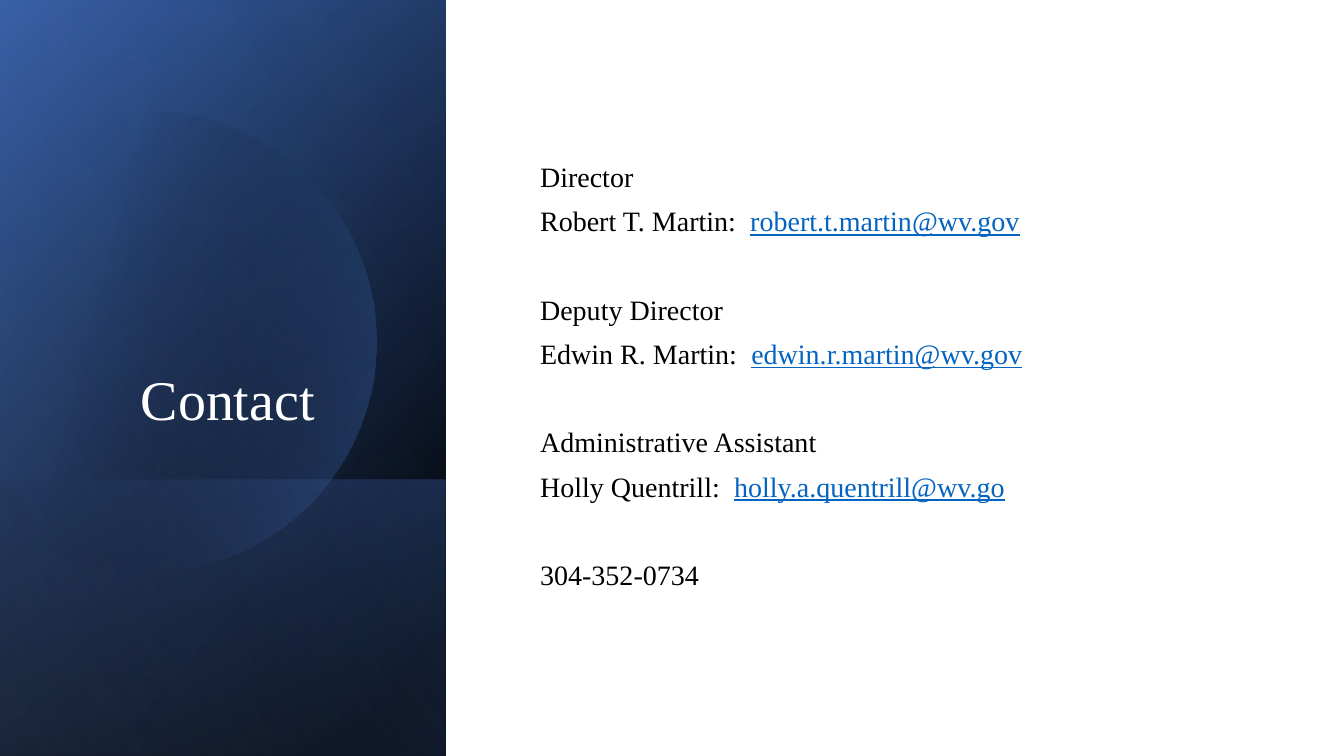
from math import acos, cos, sin

from pptx import Presentation
from pptx.dml.color import RGBColor
from pptx.enum.shapes import MSO_SHAPE
from pptx.enum.text import MSO_ANCHOR, PP_ALIGN
from pptx.oxml import parse_xml
from pptx.oxml.ns import nsdecls, qn
from pptx.util import Pt

# Content: role, then name and address
TITLE = "Contact"
CONTACTS = [
    ("Director", "Robert T. Martin:  ", "robert.t.martin@wv.gov"),
    ("Deputy Director", "Edwin R. Martin:  ", "edwin.r.martin@wv.gov"),
    ("Administrative Assistant", "Holly Quentrill:  ", "holly.a.quentrill@wv.go"),
]
PHONE = "304-352-0734"

# Layout and style, in points
FONT = "Times New Roman"
WIDTH, HEIGHT = 960, 540
PANEL_WIDTH = 318.5
BAND_TOP = 342.8
CIRCLE_X, CIRCLE_Y, RADIUS = 103.7, 244, 165
LINE_GAP, GROUP_GAP = 10, 41.6

# Gradients: angle, then stops of position, colour and opacity in percent
BASE = (220, [(0, "000000", 100), (8, "000000", 100), (100, "2F5496", 100)])
GLOW = (240, [(0, "000000", 0), (99, "4472C4", 46), (100, "4472C4", 46)])
BAND = (140, [(0, "4472C4", 29), (2, "4472C4", 29), (100, "000000", 30)])
DISC = (14, [(0, "000000", 0), (29, "000000", 0), (100, "4472C4", 43)])
SHEEN = (150, [(0, "000000", 0), (99, "8DA9DB", 11), (100, "8DA9DB", 11)])


def paint(target, color):
    target.rgb = RGBColor.from_string(color)


def fill_gradient(shape, gradient):
    angle, stops = gradient
    stop_xml = "".join(
        f'<a:gs pos="{position * 1000}"><a:srgbClr val="{color}">'
        f'<a:alpha val="{opacity * 1000}"/></a:srgbClr></a:gs>'
        for position, color, opacity in stops
    )
    shape.fill.background()
    properties = shape._element.spPr
    properties.replace(
        properties.find(qn("a:noFill")),
        parse_xml(
            f'<a:gradFill {nsdecls("a")} rotWithShape="1"><a:gsLst>{stop_xml}</a:gsLst>'
            f'<a:lin ang="{angle * 60000}" scaled="0"/></a:gradFill>'
        ),
    )


def finish(shape):
    shape.line.fill.background()
    shape.shadow.inherit = False
    return shape


def add_rectangle(slide, top, width, height):
    return finish(slide.shapes.add_shape(
        MSO_SHAPE.RECTANGLE, Pt(0), Pt(top), Pt(width), Pt(height)))


def add_panel(slide, gradient, top=0):
    fill_gradient(add_rectangle(slide, top, PANEL_WIDTH, HEIGHT - top), gradient)


def add_disc(slide, steps=120):
    # Circle cut off at the left edge of the slide
    limit = acos(-CIRCLE_X / RADIUS)
    angles = [limit * (2 * step / steps - 1) for step in range(steps + 1)]
    points = [(Pt(CIRCLE_X + RADIUS * cos(angle)), Pt(CIRCLE_Y + RADIUS * sin(angle)))
              for angle in angles]
    builder = slide.shapes.build_freeform(*points[0])
    builder.add_line_segments(points[1:], close=True)
    fill_gradient(finish(builder.convert_to_shape()), DISC)


def place(shape, left, top, width, height):
    shape.left, shape.top = Pt(left), Pt(top)
    shape.width, shape.height = Pt(width), Pt(height)


def format_run(run, size, color):
    run.font.name = FONT
    run.font.size = Pt(size)
    paint(run.font.color, color)


def add_contacts(slide):
    lines = []
    for role, name, address in CONTACTS:
        lines += [(role, "", GROUP_GAP), (name, address, LINE_GAP)]
    lines.append((PHONE, "", GROUP_GAP))

    box = slide.shapes.add_textbox(Pt(378.7), Pt(51.1), Pt(516.2), Pt(437))
    frame = box.text_frame
    frame.word_wrap = True
    frame.vertical_anchor = MSO_ANCHOR.MIDDLE
    for index, (text, address, gap) in enumerate(lines):
        paragraph = frame.add_paragraph() if index else frame.paragraphs[0]
        paragraph.text = text
        paragraph.line_spacing = 0.9
        paragraph.space_before = Pt(gap if index else 0)
        format_run(paragraph.runs[0], 20, "000000")
        if address:
            run = paragraph.add_run()
            run.text = address
            format_run(run, 20, "0563C1")
            run.font.underline = True


def main():
    presentation = Presentation()
    presentation.slide_width, presentation.slide_height = Pt(WIDTH), Pt(HEIGHT)
    slide = presentation.slides.add_slide(presentation.slide_layouts[5])

    # White ground and layered dark panel
    ground = add_rectangle(slide, 0, WIDTH, HEIGHT)
    ground.fill.solid()
    paint(ground.fill.fore_color, "FFFFFF")
    add_panel(slide, BASE)
    add_panel(slide, GLOW)
    add_panel(slide, BAND, BAND_TOP)
    add_disc(slide)
    add_panel(slide, SHEEN)

    # Title, brought in front of the panel
    title = slide.shapes.title
    slide.shapes._spTree.append(title._element)
    place(title, 36.7, 46.1, 252, 266.4)
    title.text_frame.text = TITLE
    title.text_frame.word_wrap = True
    title.text_frame.vertical_anchor = MSO_ANCHOR.BOTTOM
    paragraph = title.text_frame.paragraphs[0]
    paragraph.alignment = PP_ALIGN.CENTER
    paragraph.line_spacing = 0.9
    format_run(paragraph.runs[0], 40, "FFFFFF")

    add_contacts(slide)
    presentation.save("out.pptx")


if __name__ == "__main__":
    main()
